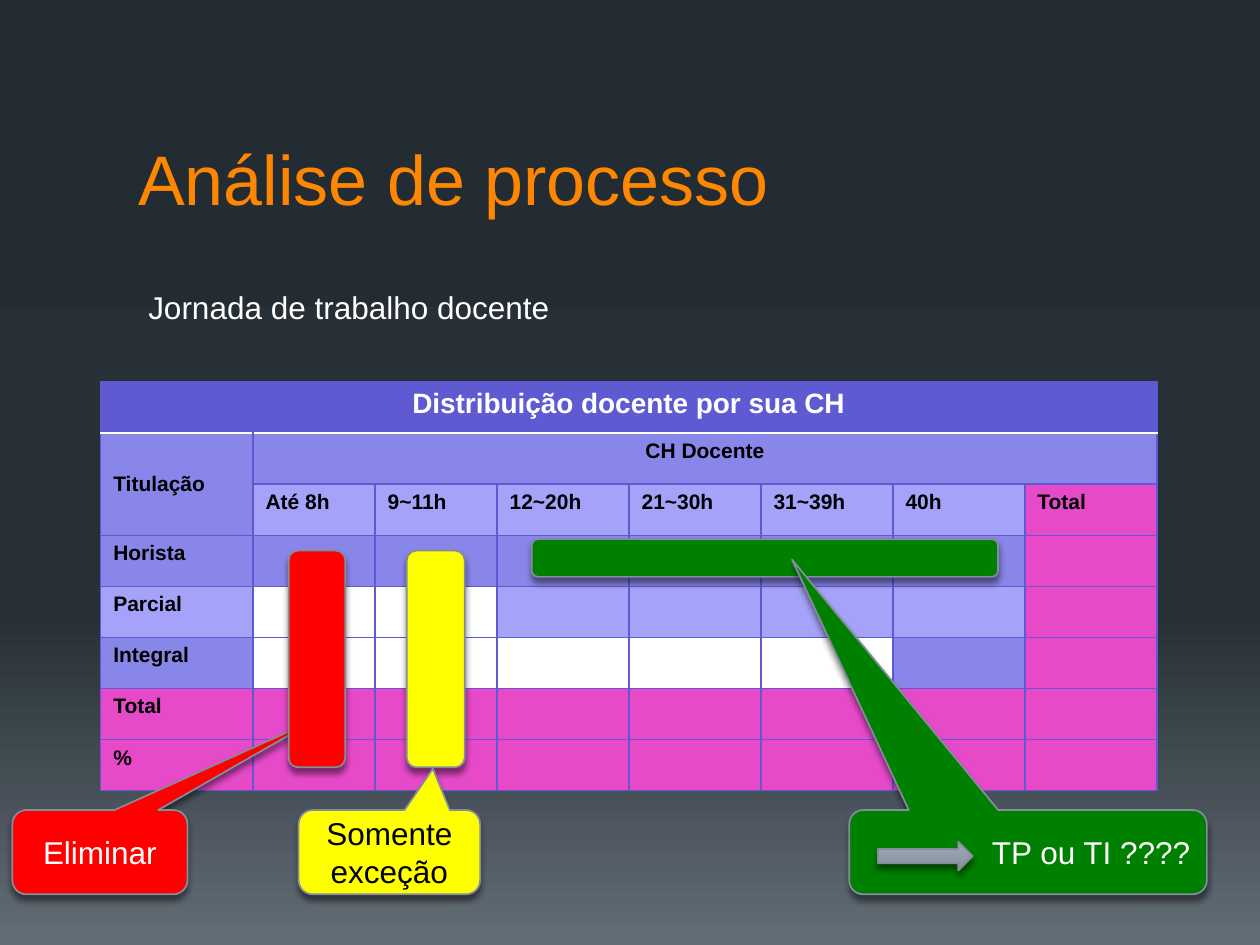
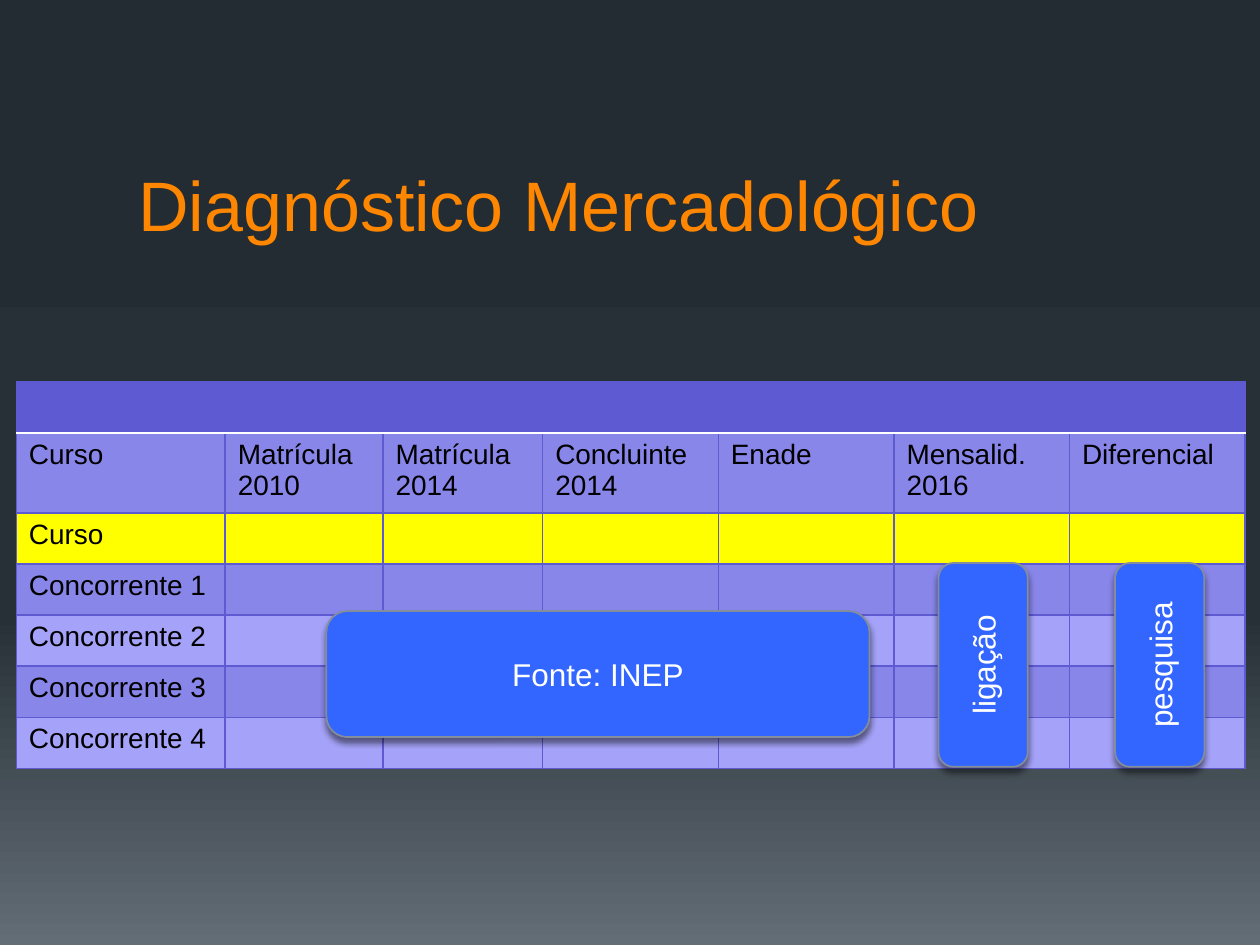
from copy import deepcopy

from lxml import etree
from pptx import Presentation
from pptx.dml.color import RGBColor
from pptx.enum.shapes import MSO_SHAPE
from pptx.enum.text import MSO_ANCHOR, PP_ALIGN
from pptx.oxml.ns import qn
from pptx.util import Cm, Pt

LEFT, CENTER, RIGHT = PP_ALIGN.LEFT, PP_ALIGN.CENTER, PP_ALIGN.RIGHT
TOP, MIDDLE, BOTTOM = MSO_ANCHOR.TOP, MSO_ANCHOR.MIDDLE, MSO_ANCHOR.BOTTOM
ROUNDED = MSO_SHAPE.ROUNDED_RECTANGLE
CALLOUT = MSO_SHAPE.ROUNDED_RECTANGULAR_CALLOUT
ARROW = MSO_SHAPE.RIGHT_ARROW

FONT = "Arial"
ORANGE = RGBColor(0xFF, 0x86, 0x00)
WHITE = RGBColor(0xFF, 0xFF, 0xFF)
BLACK = RGBColor(0x00, 0x00, 0x00)
RED = RGBColor(0xFF, 0x00, 0x00)
YELLOW = RGBColor(0xFF, 0xFF, 0x00)
GREEN = RGBColor(0x00, 0x80, 0x00)
BLUE = RGBColor(0x33, 0x66, 0xFF)
PINK = RGBColor(0xE7, 0x4A, 0xC9)
VIOLET = RGBColor(0x5D, 0x5A, 0xD2)
BAND_DARK = RGBColor(0x89, 0x86, 0xEA)
BAND_LIGHT = RGBColor(0xA5, 0xA3, 0xF9)
GREY = RGBColor(0x83, 0x8D, 0x9B)

BACKGROUND = [(0, RGBColor(0x24, 0x2C, 0x33)), (0.65, RGBColor(0x27, 0x30, 0x37)),
              (1, RGBColor(0x63, 0x6D, 0x76))]
ARROW_FILL = [(0, RGBColor(0x9F, 0xA9, 0xB6)), (0.6, RGBColor(0x92, 0x9B, 0xA8)),
              (1, GREY)]

# Letters used in the fill maps of the tables
FILLS = {"H": VIOLET, "D": BAND_DARK, "L": BAND_LIGHT, "W": WHITE,
         "P": PINK, "Y": YELLOW}


def write(tf, text, size=18, color=WHITE, bold=False, align=LEFT):
    """Fill a text frame, one paragraph per line of text."""
    for i, line in enumerate(text.split("\n")):
        p = tf.add_paragraph() if i else tf.paragraphs[0]
        p.alignment = align
        r = p.add_run()
        r.text = line
        r.font.name, r.font.size = FONT, Pt(size)
        r.font.bold, r.font.color.rgb = bold, color


def gradient(element, fill, stops):
    """Vertical gradient, from top to bottom, with three stops."""
    fill.gradient()
    fill.gradient_angle = 270
    gs_list = next(element.iter(qn("a:gsLst")))
    gs_list.append(deepcopy(gs_list[-1]))
    for stop, (position, color) in zip(fill.gradient_stops, stops):
        stop.position = position
        stop.color.rgb = color


def add_shadow(shape):
    shape.shadow.inherit = False
    effects = shape.element.spPr.find(qn("a:effectLst"))
    outer = etree.SubElement(effects, qn("a:outerShdw"), blurRad=str(Pt(3.8)),
                             dist=str(Pt(3)), dir="5400000", rotWithShape="0")
    color = etree.SubElement(outer, qn("a:srgbClr"), val=str(BLACK))
    etree.SubElement(color, qn("a:alpha"), val="48000")


def set_borders(cell, **sides):
    """Draw cell borders; each side is a (colour, width) pair."""
    tc_pr = cell._tc.get_or_add_tcPr()
    for i, side in enumerate("LRTB"):
        color, width = sides.get(side, (VIOLET, 1))
        ln = etree.Element(qn(f"a:ln{side}"), w=str(Pt(width)))
        fill = etree.SubElement(ln, qn("a:solidFill"))
        etree.SubElement(fill, qn("a:srgbClr"), val=str(color))
        tc_pr.insert(i, ln)


class Deck:
    def __init__(self):
        self.prs = Presentation()
        self.prs.slide_width, self.prs.slide_height = Cm(25.4), Cm(19.05)
        self.s = None

    def slide(self):
        self.s = self.prs.slides.add_slide(self.prs.slide_layouts[6])
        gradient(self.s.element, self.s.background.fill, BACKGROUND)

    def text(self, text, x, y, w, h, wrap=True, anchor=TOP, **style):
        tf = self.s.shapes.add_textbox(Cm(x), Cm(y), Cm(w), Cm(h)).text_frame
        tf.word_wrap, tf.vertical_anchor = wrap, anchor
        write(tf, text, **style)

    def title(self, text, y):
        self.text(text, 2.54, y, 20.32, 3.2, anchor=BOTTOM, size=40, color=ORANGE)

    def shape(self, kind, fill, x, y, w, h, text="", tip=(), vertical=False,
              color=WHITE, align=CENTER):
        sp = self.s.shapes.add_shape(kind, Cm(x), Cm(y), Cm(w), Cm(h))
        if isinstance(fill, list):
            gradient(sp.element, sp.fill, fill)
        else:
            sp.fill.solid()
            sp.fill.fore_color.rgb = fill
        sp.line.color.rgb, sp.line.width = GREY, Pt(1)
        add_shadow(sp)
        for i, value in enumerate(tip):
            sp.adjustments[i] = value
        if text:
            tf = sp.text_frame
            tf.word_wrap, tf.vertical_anchor = True, MIDDLE
            if vertical:
                tf._txBody.bodyPr.set("vert", "vert270")
            write(tf, text, color=color, align=align)

    def table(self, x, y, widths, heights, fills):
        """Coloured grid; the first row is closed by a white rule."""
        table = self.s.shapes.add_table(
            len(heights), len(widths), Cm(x), Cm(y),
            Cm(sum(widths)), Cm(sum(heights))).table
        table.first_row = table.horz_banding = False
        for column, width in zip(table.columns, widths):
            column.width = Cm(width)
        rule = (WHITE, 1.5)
        for i, (row, height) in enumerate(zip(table.rows, heights)):
            row.height = Cm(height)
            for cell, letter in zip(row.cells, fills[i]):
                cell.fill.solid()
                cell.fill.fore_color.rgb = FILLS[letter]
                set_borders(cell, **({"B": rule} if i == 0 else
                                     {"T": rule} if i == 1 else {}))
        return table


def process_slide(deck):
    deck.slide()

    # Teaching hours table
    table = deck.table(
        2.03, 7.7, [3.07, 2.46, 2.46] + [2.66] * 5, [1.03] * 8,
        ["HHHHHHHH", "DDDDDDDD", "DLLLLLLP", "DDDDDDDP",
         "LWWLLLLP", "DWWWWWDP", "PPPPPPPP", "PPPPPPPP"])
    for first, last in [((0, 0), (0, 7)), ((1, 0), (2, 0)), ((1, 1), (1, 7))]:
        table.cell(*first).merge(table.cell(*last))
    write(table.cell(0, 0).text_frame, "Distribuição docente por sua CH",
          size=16, bold=True, align=CENTER)
    label = {"size": 12, "color": BLACK, "bold": True}
    table.cell(1, 0).vertical_anchor = MIDDLE
    write(table.cell(1, 0).text_frame, "Titulação", **label)
    write(table.cell(1, 1).text_frame, "CH Docente", align=CENTER, **label)
    hours = ["Até 8h", "9~11h", "12~20h", "21~30h", "31~39h", "40h", "Total"]
    for c, text in enumerate(hours, 1):
        write(table.cell(2, c).text_frame, text, **label)
    for r, text in enumerate(["Horista", "Parcial", "Integral", "Total", "%"], 3):
        write(table.cell(r, 0).text_frame, text, **label)

    # Highlights and their callouts
    deck.shape(CALLOUT, RED, 0.25, 16.33, 3.53, 1.7, "Eliminar", tip=(1.25, -1.59))
    deck.shape(ROUNDED, RED, 5.82, 11.1, 1.14, 4.37)
    deck.shape(ROUNDED, YELLOW, 8.2, 11.1, 1.17, 4.37)
    deck.shape(CALLOUT, YELLOW, 6.02, 16.33, 3.66, 1.7, "Somente exceção",
               tip=(0.24, -0.99), color=BLACK)
    deck.text("Jornada de trabalho docente", 2.74, 5.69, 8.69, 1.02, wrap=False)
    deck.shape(ROUNDED, GREEN, 10.72, 10.87, 9.4, 0.76)
    deck.shape(CALLOUT, GREEN, 17.12, 16.33, 7.21, 1.7, "TP ou TI ????",
               tip=(-0.66, -3.47), align=RIGHT)
    deck.shape(ARROW, ARROW_FILL, 17.7, 16.97, 1.91, 0.58)

    deck.title("Análise de processo", 1.35)


def market_slide(deck):
    deck.slide()

    # Competitor table
    table = deck.table(
        0.33, 7.7, [4.21, 3.18, 3.22] + [3.54] * 4, [1.03, 1.5] + [1.03] * 5,
        [letter * 7 for letter in "HDYDLDL"])
    headers = ["Curso", "Matrícula 2010", "Matrícula 2014", "Concluinte\n2014",
               "Enade", "Mensalid. 2016", "Diferencial"]
    for c, text in enumerate(headers):
        write(table.cell(1, c).text_frame, text, size=16, color=BLACK)
    courses = ["Curso"] + [f"Concorrente {n}" for n in range(1, 5)]
    for r, text in enumerate(courses, 2):
        write(table.cell(r, 0).text_frame, text, size=16, color=BLACK)

    # Data sources
    deck.shape(ROUNDED, BLUE, 6.58, 12.32, 10.95, 2.54, "Fonte: INEP")
    for x, text in [(18.92, "ligação"), (22.48, "pesquisa")]:
        deck.shape(ROUNDED, BLUE, x, 11.35, 1.8, 4.11, text, vertical=True)

    deck.title("Diagnóstico Mercadológico", 1.88)


def main():
    deck = Deck()
    process_slide(deck)
    market_slide(deck)
    deck.prs.save("out.pptx")


if __name__ == "__main__":
    main()
